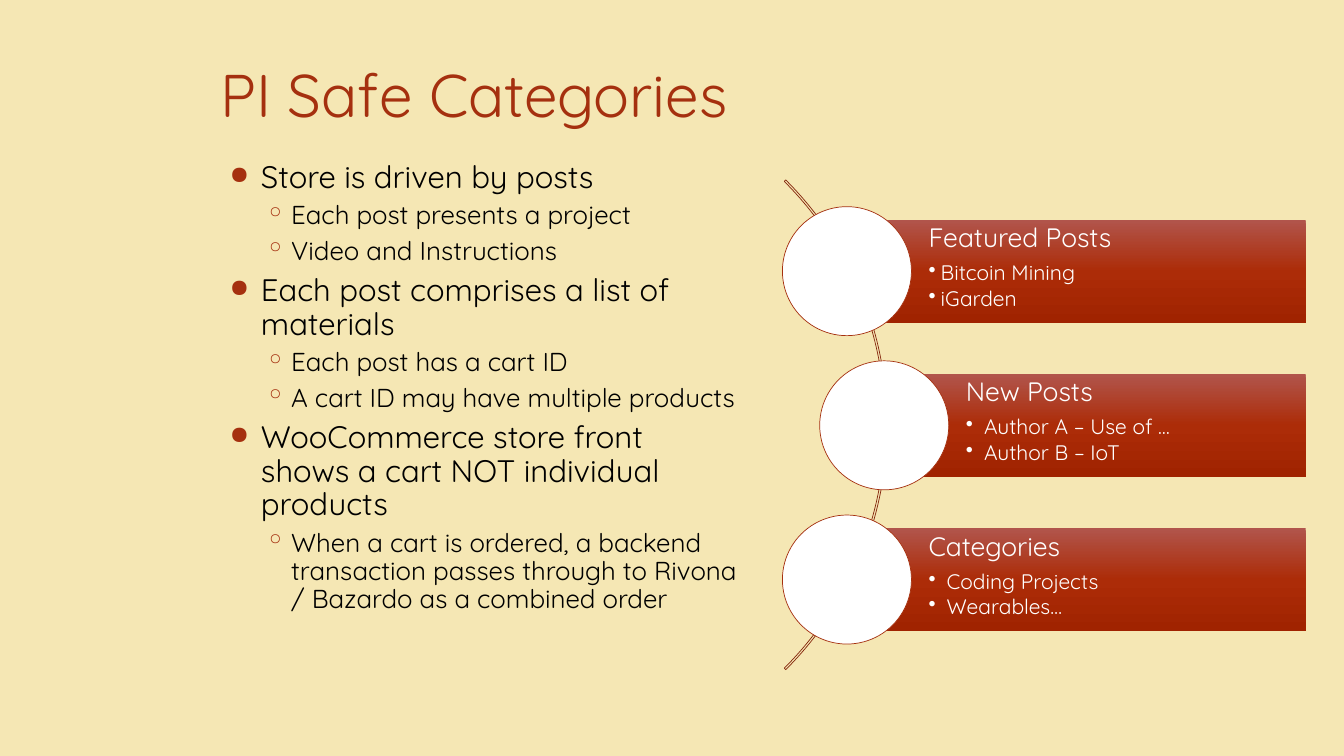
from copy import deepcopy

from lxml import etree
from pptx import Presentation
from pptx.dml.color import RGBColor
from pptx.enum.shapes import MSO_SHAPE as Shape
from pptx.enum.text import MSO_ANCHOR as Anchor
from pptx.oxml.ns import qn
from pptx.util import Inches, Pt

FONT = "Quicksand"
CREAM = RGBColor(0xF5, 0xE7, 0xB4)
RUST = RGBColor(0xA5, 0x30, 0x0F)
DARK_RUST = RGBColor(0x84, 0x26, 0x0C)
WHITE = RGBColor(0xFF, 0xFF, 0xFF)
BLACK = RGBColor(0x00, 0x00, 0x00)
BAR_STOPS = [
    (0, RGBColor(0xB1, 0x55, 0x4C)),
    (0.5, RGBColor(0xAC, 0x2C, 0x08)),
    (1, RGBColor(0xA0, 0x23, 0x00)),
]

OUTLINE = [
    (0, "Store is driven by posts"),
    (1, "Each post presents a project"),
    (1, "Video and Instructions"),
    (0, "Each post comprises a list of materials"),
    (1, "Each post has a cart ID"),
    (1, "A cart ID may have multiple products"),
    (0, "WooCommerce store front shows a cart NOT individual products"),
    (1, "When a cart is ordered, a backend transaction passes through to "
        "Rivona / Bazardo as a combined order"),
]

# Bar left edge, bullet indent, heading, items
CATEGORIES = [
    (8.4, 0.12, "Featured Posts", ["Bitcoin Mining", "iGarden"]),
    (8.77, 0.18, "New Posts", ["Author A – Use of …", "Author B – IoT"]),
    (8.4, 0.18, "Categories", ["Coding Projects", "Wearables…"]),
]
BAR_RIGHT, BAR_TOP, BAR_HEIGHT, BAR_PITCH = 12.95, 2.18, 1.02, 1.53
CIRCLE_SIZE = 1.28


def add_text_box(page, left, top, width, height):
    box = page.shapes.add_textbox(
        Inches(left), Inches(top), Inches(width), Inches(height))
    box.text_frame.word_wrap = True
    return box.text_frame


def add_plain_shape(page, kind, left, top, width, height):
    shape = page.shapes.add_shape(
        kind, Inches(left), Inches(top), Inches(width), Inches(height))
    shape.shadow.inherit = False
    return shape


def set_outline(shape, color):
    shape.line.color.rgb = color
    shape.line.width = Pt(0.5)


def add_para(frame, text, size, color):
    """Write into the empty first paragraph, or else into a new one."""
    first = frame.paragraphs[0]
    para = frame.add_paragraph() if first.runs else first
    span = para.add_run()
    span.text = text
    span.font.name = FONT
    span.font.size = Pt(size)
    span.font.color.rgb = color
    return para


def set_bullet(para, char, margin, hanging, color=None, percent=100):
    props = para._p.get_or_add_pPr()
    props.set("marL", str(Inches(margin)))
    props.set("indent", str(-Inches(hanging)))
    if color is not None:
        holder = etree.SubElement(props, qn("a:buClr"))
        etree.SubElement(holder, qn("a:srgbClr"), val=str(color))
    etree.SubElement(props, qn("a:buSzPct"), val=str(percent * 1000))
    etree.SubElement(props, qn("a:buChar"), char=char)


def fill_bar(bar):
    """Give the bar its three-stop gradient, running top to bottom."""
    bar.fill.gradient()
    bar.fill.gradient_angle = 270
    stop_list = bar.fill._fill._gradFill.find(qn("a:gsLst"))
    stop_list.append(deepcopy(stop_list[-1]))
    for stop, (position, color) in zip(bar.fill.gradient_stops, BAR_STOPS):
        stop.position = position
        stop.color.rgb = color


def add_title(page):
    frame = add_text_box(page, 2.09, 0.3, 10.93, 1.25)
    frame.vertical_anchor = Anchor.MIDDLE
    add_para(frame, "PI Safe Categories", 43, RUST)


def add_outline(page):
    frame = add_text_box(page, 2.09, 1.55, 5.33, 5.55)
    for number, (level, text) in enumerate(OUTLINE):
        para = add_para(frame, text, 18.5 if level else 22.2, BLACK)
        if level:
            set_bullet(para, "◦", 0.7, 0.26, RUST)
        else:
            set_bullet(para, "●", 0.4, 0.31, RUST, 80)
        para.level = level
        para.line_spacing = 0.9
        if number:
            para.space_before = Pt(5.5 if level else 6)


def add_arc(page):
    arc = add_plain_shape(page, Shape.BLOCK_ARC, 1.93, 0.78, 6.87, 6.87)
    for index, value in enumerate((189, 27, 0.003)):
        arc.adjustments[index] = value
    arc.fill.background()
    set_outline(arc, DARK_RUST)


def add_category(page, left, top, indent, heading, items):
    bar = add_plain_shape(
        page, Shape.RECTANGLE, left, top, BAR_RIGHT - left, BAR_HEIGHT)
    fill_bar(bar)
    bar.line.fill.background()

    frame = bar.text_frame
    frame.word_wrap = True
    frame.vertical_anchor = Anchor.TOP
    frame.margin_left = Inches(0.81)
    frame.margin_top = frame.margin_right = frame.margin_bottom = Inches(0.05)
    title = add_para(frame, heading, 19, WHITE)
    title.space_after = Pt(6.5)
    for item in items:
        para = add_para(frame, item, 15, WHITE)
        set_bullet(para, "•", indent, indent)
        para.level = 1
        para.space_after = Pt(2)
    for para in frame.paragraphs:
        para.alignment = 1
        para.line_spacing = 0.9

    circle = add_plain_shape(
        page, Shape.OVAL, left - CIRCLE_SIZE / 2,
        top + (BAR_HEIGHT - CIRCLE_SIZE) / 2, CIRCLE_SIZE, CIRCLE_SIZE)
    circle.fill.solid()
    circle.fill.fore_color.rgb = WHITE
    set_outline(circle, RUST)


def main():
    deck = Presentation()
    deck.slide_width, deck.slide_height = Inches(13.33), Inches(7.5)
    page = deck.slides.add_slide(deck.slide_layouts[6])
    page.background.fill.solid()
    page.background.fill.fore_color.rgb = CREAM

    add_title(page)
    add_arc(page)
    for row, (left, indent, heading, items) in enumerate(CATEGORIES):
        add_category(
            page, left, BAR_TOP + row * BAR_PITCH, indent, heading, items)
    add_outline(page)
    deck.save("out.pptx")


if __name__ == "__main__":
    main()
